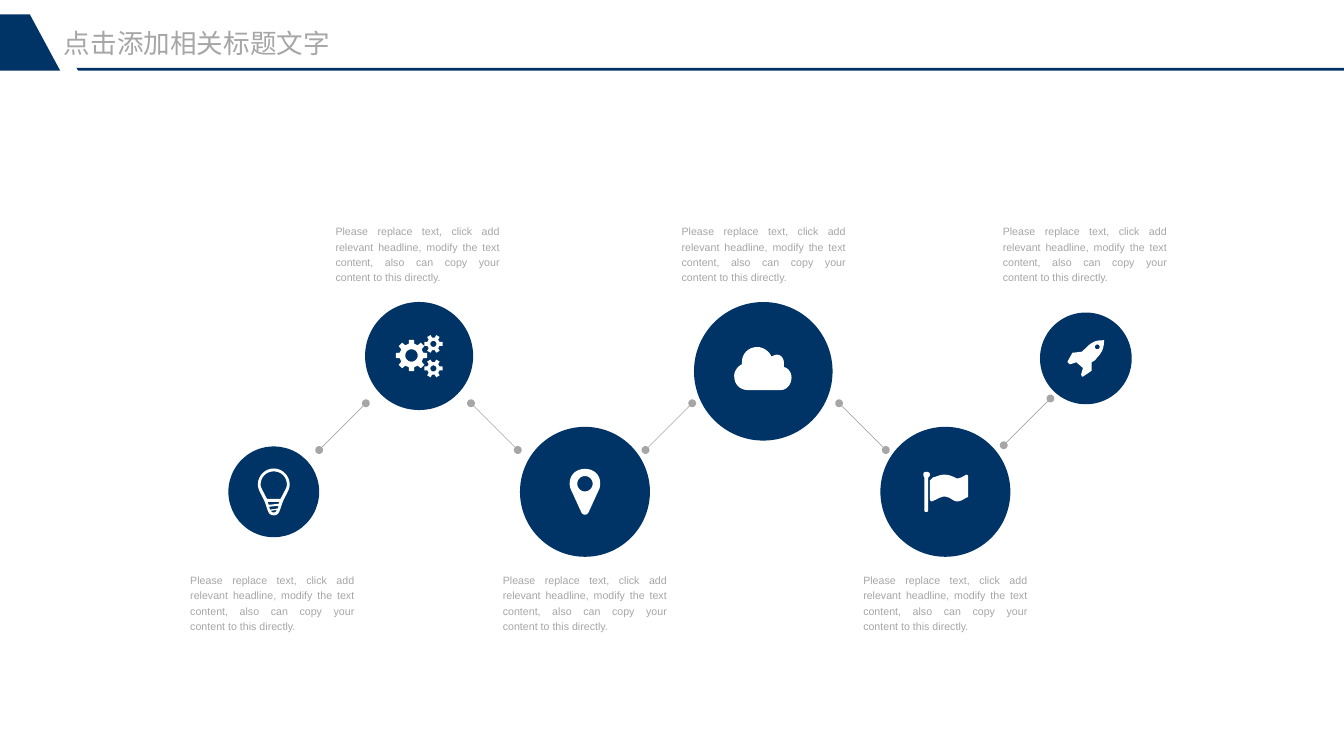
from dataclasses import dataclass
from math import cos, pi, sin

from lxml import etree
from pptx import Presentation
from pptx.dml.color import RGBColor
from pptx.enum.shapes import MSO_CONNECTOR, MSO_SHAPE
from pptx.enum.text import MSO_ANCHOR, MSO_AUTO_SIZE, PP_ALIGN
from pptx.oxml.ns import qn
from pptx.util import Pt

OVAL = MSO_SHAPE.OVAL
STRAIGHT = MSO_CONNECTOR.STRAIGHT
TOP = MSO_ANCHOR.TOP
LEFT, JUSTIFY = PP_ALIGN.LEFT, PP_ALIGN.JUSTIFY
NO_FIT, GROW = MSO_AUTO_SIZE.NONE, MSO_AUTO_SIZE.SHAPE_TO_FIT_TEXT


@dataclass(frozen=True)
class Theme:
    navy: RGBColor = RGBColor(0x00, 0x33, 0x66)
    grey: RGBColor = RGBColor(0xA6, 0xA6, 0xA6)
    white: RGBColor = RGBColor(0xFF, 0xFF, 0xFF)
    font: str = "Arial"
    title_size: float = 20
    body_size: float = 8
    line: float = 0.5


THEME = Theme()


def ring(cx, cy, r, steps=32):
    angles = [2 * pi * i / steps for i in range(steps)]
    return [(cx + r * cos(a), cy + r * sin(a)) for a in angles]


def gear(cx, cy, teeth, tip, root, hole):
    pitch = 2 * pi / teeth
    profile = ((-0.3, root), (-0.2, tip), (0.2, tip), (0.3, root))
    outline = [
        (cx + r * cos((i + turn) * pitch), cy + r * sin((i + turn) * pitch))
        for i in range(teeth)
        for turn, r in profile
    ]
    return [outline, ring(cx, cy, hole)]


TITLE = "点击添加相关标题文字"
CAPTION = ("Please replace text, click add relevant headline, modify the text content, "
           "also can copy your content to this directly.")

BULB = [
    [(0, 0), (-6.5, 0, -12, 5.4, -12, 12.2), (-12, 16.6, -7.9, 21.6, -6.5, 25.9),
     (-4.3, 31.7, -4.3, 35.3, 0, 35.3), (4.3, 35.3, 4.3, 31.7, 6.5, 25.9),
     (7.9, 21.6, 12, 16.6, 12, 12.2), (12, 5.4, 6.5, 0, 0, 0)],
    [(4.9, 23), (-4.9, 23), (-5.5, 22.3, -6, 21.2, -6.5, 20.2),
     (-7.9, 17.3, -9.9, 14.4, -9.9, 12.2), (-9.9, 6.5, -5.7, 2.2, 0, 2.2),
     (5.7, 2.2, 9.9, 6.5, 9.9, 12.2), (9.9, 14.4, 7.9, 17.3, 6.5, 20.2),
     (6, 21.2, 5.5, 22.3, 4.9, 23)],
    [(-3.8, 27.4), (-4.6, 25.2), (4.3, 25.2), (3.6, 26.6)],
    [(2.9, 30.2), (-2.9, 31), (-3.4, 28.8), (3.6, 28.1)],
    [(-2.2, 31.9), (2.2, 31.2), (1.4, 33.1, 1, 33.1, 0, 33.1), (-0.7, 33.1, -1.4, 33.1, -2.2, 31.9)],
]
GEARS = gear(0, 0, 8, 11.9, 9, 4.7) + gear(16.5, -8.7, 6, 7, 4.8, 2.3) + gear(16.5, 9.8, 6, 7, 4.8, 2.3)
PIN = [
    [(10.8, 15.1), (2.9, 32.4), (2.2, 33.8, 1.4, 34.5, 0, 34.5),
     (-1.4, 34.5, -2.2, 33.8, -2.9, 32.4), (-10.8, 15.1),
     (-11.2, 14.4, -11.5, 12.2, -11.5, 10.8), (-11.5, 4.3, -6.5, 0, 0, 0),
     (6.5, 0, 11.5, 4.3, 11.5, 10.8), (11.5, 12.2, 11.2, 14.4, 10.8, 15.1)],
    ring(0, 11.2, 5.8),
]
CLOUD = [
    [(35.3, 32.4), (10.1, 32.4), (4.3, 32.4, 0, 28.1, 0, 21.6), (0, 18, 2.9, 14.4, 5.8, 13),
     (5.8, 11.5), (5.8, 5, 10.8, 0, 17.3, 0), (22.3, 0, 26.6, 3.6, 28.1, 7.2),
     (29.5, 6.5, 31, 5.8, 32.4, 5.8), (35.3, 5.8, 37.4, 8.6, 37.4, 11.5), (37.4, 15.1),
     (41, 15.8, 43.2, 19.4, 43.2, 23), (43.2, 28.1, 39.6, 32.4, 35.3, 32.4)],
]
FLAG = [
    [(3.6, 4.3), (3.6, 29.5), (2.9, 30.2), (1.4, 30.2), (0.7, 29.5), (0.7, 4.3),
     (0.7, 4.3, 0, 2.9, 0, 2.2), (0, 0.7, 0.7, 0, 2.2, 0), (3.6, 0, 5, 0.7, 5, 2.2),
     (5, 2.9, 4.3, 4.3, 3.6, 4.3)],
    [(33.8, 18.7), (33.8, 18.7, 33.8, 19.4, 32.4, 19.4), (30.2, 20.9, 28.1, 22.3, 25.2, 22.3),
     (22.3, 22.3, 20.2, 18.7, 15.8, 18.7), (13, 18.7, 10.1, 20.9, 6.5, 22.3),
     (5.8, 22.3, 5, 21.6, 5, 20.9), (5, 6.5), (5.8, 5.8), (7.2, 4.3),
     (10.1, 3.6, 12.2, 2.2, 15.8, 2.2), (18.7, 2.2, 20.9, 2.9, 23.8, 4.3), (25.2, 5),
     (28.8, 5, 31.7, 2.2, 32.4, 2.2), (33.1, 2.2, 33.8, 2.9, 33.8, 3.6)],
]
ROCKET = [
    [(21.6, 13.7), (20.9, 15.1, 19.4, 15.8, 18, 16.6), (18, 23), (11.5, 27.4), (10.8, 27.4),
     (10.1, 25.9), (11.5, 20.9), (6.5, 16.6), (2.2, 18), (1.4, 18), (0, 16.6), (0, 15.8),
     (3.6, 9.4), (4.3, 9.4), (10.8, 8.6), (11.5, 7.9, 13, 6.5, 13.7, 5.8),
     (18, 1.4, 20.9, 0, 26.6, 0), (27.4, 0), (27.4, 5.8, 25.9, 9.4, 21.6, 13.7)],
    ring(22.3, 5, 1.8),
]

UPPER_TEXT, LOWER_TEXT = 167.8, 430.6
TEXT_W, TEXT_H = 123.8, 45.4
STEPS = [
    (206.2, 370.5, 68.4, BULB, (0, -17.6), 143.3, LOWER_TEXT),
    (315.7, 268.2, 81.4, GEARS, (-5.7, -0.4), 252.7, UPPER_TEXT),
    (440.6, 370.5, 97.9, PIN, (0, -17.3), 378.7, LOWER_TEXT),
    (574.9, 279.7, 104.4, CLOUD, (-21.9, -18.3), 513.4, UPPER_TEXT),
    (712.1, 370.5, 97.9, FLAG, (-16.6, -15.1), 650.2, LOWER_TEXT),
    (817.9, 270, 69.1, ROCKET, (-13.7, -13.7), 755.3, UPPER_TEXT),
]
SPAN = 35.2
LINKS = [(240.4, 339, -SPAN), (354.8, 303.8, SPAN), (486.2, 339, -SPAN),
         (632, 303.8, SPAN), (756, 335.4, -SPAN)]
HEADER = [
    [(57.6, 51.1), (1012.3, 51.1), (1012.3, 53.3), (59, 53.3)],
    [(22.5, 10.8), (45.4, 53.3), (0, 53.3), (0, 10.8)],
]


def flatten(contour, steps=8):
    points = [contour[0]]
    for step in contour[1:]:
        if len(step) == 2:
            points.append(step)
            continue
        x0, y0 = points[-1]
        x1, y1, x2, y2, x3, y3 = step
        for i in range(1, steps + 1):
            t = i / steps
            u = 1 - t
            a, b, c, d = u ** 3, 3 * u * u * t, 3 * u * t * t, t ** 3
            points.append((a * x0 + b * x1 + c * x2 + d * x3, a * y0 + b * y1 + c * y2 + d * y3))
    return points


def paint(sp, color):
    sp.shadow.inherit = False
    sp.fill.solid()
    sp.fill.fore_color.rgb = color
    sp.line.fill.background()


def add_outline(shapes, contours, color, dx=0, dy=0):
    builder = None
    for contour in contours:
        points = [(Pt(x + dx), Pt(y + dy)) for x, y in flatten(contour)]
        if builder is None:
            builder = shapes.build_freeform(*points[0])
        else:
            builder.move_to(*points[0])
        builder.add_line_segments(points[1:], close=True)
    paint(builder.convert_to_shape(), color)


def add_link(shapes, x, y, rise):
    line = shapes.add_connector(STRAIGHT, Pt(x), Pt(y), Pt(x + SPAN), Pt(y + rise))
    line.line.color.rgb = THEME.grey
    line.line.width = Pt(THEME.line)
    ln = line.line._get_or_add_ln()
    for end in ("a:headEnd", "a:tailEnd"):
        etree.SubElement(ln, qn(end), type="oval")
    etree.SubElement(line._element.spPr, qn("a:effectLst"))


def write(sp, text, size, align, fit):
    tf = sp.text_frame
    tf.word_wrap = True
    tf.auto_size = fit
    tf.vertical_anchor = TOP
    tf.margin_left = tf.margin_right = tf.margin_top = tf.margin_bottom = 0
    p = tf.paragraphs[0]
    p.alignment = align
    r = p.add_run()
    r.text = text
    r.font.name = THEME.font
    r.font.size = Pt(size)
    r.font.color.rgb = THEME.grey
    return p


def main():
    prs = Presentation()
    prs.slide_width, prs.slide_height = Pt(1012.3), Pt(569.5)
    s = prs.slides.add_slide(prs.slide_layouts[5])
    title = s.shapes.title
    title.left, title.top, title.width, title.height = Pt(48.2), Pt(20.2), Pt(241.2), Pt(24.5)
    write(title, TITLE, THEME.title_size, LEFT, NO_FIT).space_after = Pt(6)

    for cx, cy, size, icon, (dx, dy), text_x, text_y in STEPS:
        group = s.shapes.add_group_shape()
        circle = group.shapes.add_shape(OVAL, Pt(cx - size / 2), Pt(cy - size / 2), Pt(size), Pt(size))
        paint(circle, THEME.navy)
        add_outline(group.shapes, icon, THEME.white, cx + dx, cy + dy)
        box = s.shapes.add_textbox(Pt(text_x), Pt(text_y), Pt(TEXT_W), Pt(TEXT_H))
        write(box, CAPTION, THEME.body_size, JUSTIFY, GROW).line_spacing = 1.2

    for link in LINKS:
        add_link(s.shapes, *link)
    for part in HEADER:
        add_outline(s.shapes, [part], THEME.navy)
    prs.save("out.pptx")


if __name__ == "__main__":
    main()
